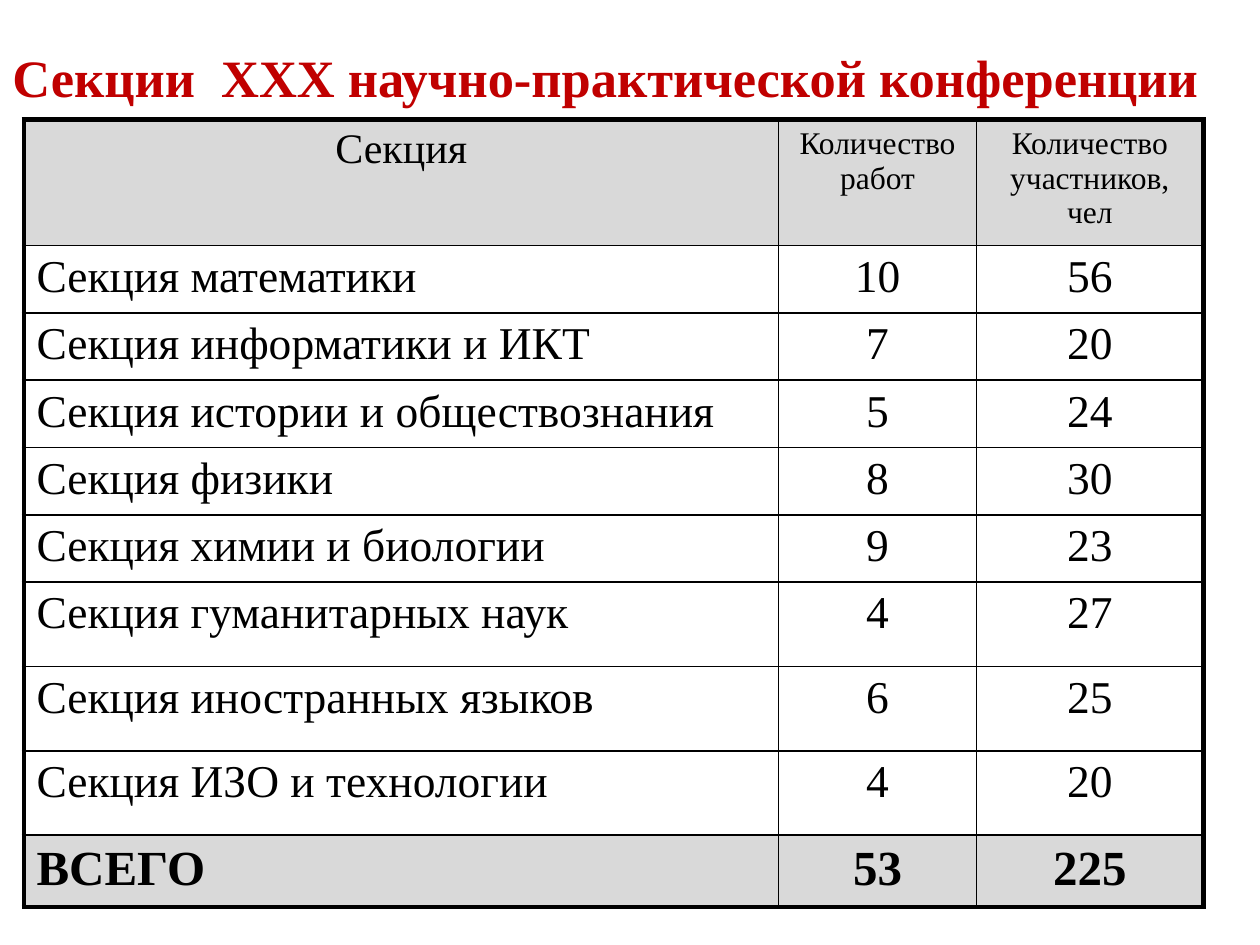
from typing import NamedTuple

from lxml import etree
from pptx import Presentation
from pptx.dml.color import RGBColor
from pptx.enum.text import PP_ALIGN
from pptx.oxml.ns import qn
from pptx.util import Inches, Pt

CENTER, LEFT = PP_ALIGN.CENTER, PP_ALIGN.LEFT
FONT = "Times New Roman"
BLACK, RED, GREY = "000000", "C00000", "D9D9D9"
THIN, THICK = 1, 3
COLUMN_WIDTHS = [5.99, 1.57, 1.8]
HEADER_HEIGHT, ROW_HEIGHT, TALL_HEIGHT, TOTAL_HEIGHT = 1.0, 2.67 / 5, 0.67, 0.57
HEADINGS = ["Секция", "Количество работ", "Количество\nучастников, чел"]


class Section(NamedTuple):
    name: str
    works: int
    people: int
    height: float = ROW_HEIGHT


SECTIONS = [
    Section("Секция математики", 10, 56),
    Section("Секция информатики и ИКТ", 7, 20),
    Section("Секция истории и обществознания", 5, 24),
    Section("Секция физики", 8, 30),
    Section("Секция химии и биологии", 9, 23),
    Section("Секция гуманитарных наук", 4, 27, TALL_HEIGHT),
    Section("Секция иностранных языков", 6, 25, TALL_HEIGHT),
    Section("Секция ИЗО и технологии", 4, 20, TALL_HEIGHT),
]
TOTAL = Section("ВСЕГО", sum(x.works for x in SECTIONS), sum(x.people for x in SECTIONS),
                TOTAL_HEIGHT)


def rgb(value: str) -> RGBColor:
    return RGBColor.from_string(value)


def write(tf, text: str, size: int, color: str = BLACK, bold: bool = False, align=LEFT) -> None:
    for i, line in enumerate(text.split("\n")):
        p = tf.add_paragraph() if i else tf.paragraphs[0]
        p.alignment = align
        r = p.add_run()
        r.text = line
        r.font.name, r.font.size, r.font.bold = FONT, Pt(size), bold
        r.font.color.rgb = rgb(color)


def set_borders(cell, widths: dict[str, int]) -> None:
    tc_pr = cell._tc.get_or_add_tcPr()
    for i, (side, width) in enumerate(widths.items()):
        ln = etree.Element(qn(f"a:ln{side}"), w=str(Pt(width)))
        fill = etree.SubElement(ln, qn("a:solidFill"))
        etree.SubElement(fill, qn("a:srgbClr"), val=BLACK)
        tc_pr.insert(i, ln)


def add_section_table(s) -> None:
    rows = [HEADINGS] + [[x.name, str(x.works), str(x.people)] for x in SECTIONS + [TOTAL]]
    heights = [HEADER_HEIGHT] + [x.height for x in SECTIONS + [TOTAL]]
    last_row, last_col = len(rows) - 1, len(COLUMN_WIDTHS) - 1
    frame = s.shapes.add_table(len(rows), len(COLUMN_WIDTHS), Inches(0.19), Inches(0.95),
                               Inches(sum(COLUMN_WIDTHS)), Inches(sum(heights)))
    table = frame.table
    table.first_row = table.horz_banding = False
    for column, width in zip(table.columns, COLUMN_WIDTHS):
        column.width = Inches(width)
    for i, (texts, height) in enumerate(zip(rows, heights)):
        table.rows[i].height = Inches(height)
        header, total = i == 0, i == last_row
        for j, text in enumerate(texts):
            cell = table.cell(i, j)
            if header or total:
                cell.fill.solid()
                cell.fill.fore_color.rgb = rgb(GREY)
            else:
                cell.fill.background()
            if header:
                size = 18 if j else 24
            else:
                size = 28 if total else 26
            write(cell.text_frame, text, size, bold=total, align=CENTER if header or j else LEFT)
            set_borders(cell, {
                "L": THIN if j else THICK,
                "R": THICK if j == last_col else THIN,
                "T": THICK if header else THIN,
                "B": THICK if total else THIN,
            })


def add_title(s) -> None:
    tf = s.shapes.add_textbox(Inches(0), Inches(0.31), Inches(10), Inches(0.61)).text_frame
    tf.word_wrap = True
    write(tf, "Секции  XXX научно-практической конференции", 30, RED, bold=True)


def main() -> None:
    prs = Presentation()
    prs.slide_width, prs.slide_height = Inches(10), Inches(7.5)
    s = prs.slides.add_slide(prs.slide_layouts[6])
    add_section_table(s)
    add_title(s)
    prs.save("out.pptx")


if __name__ == "__main__":
    main()
